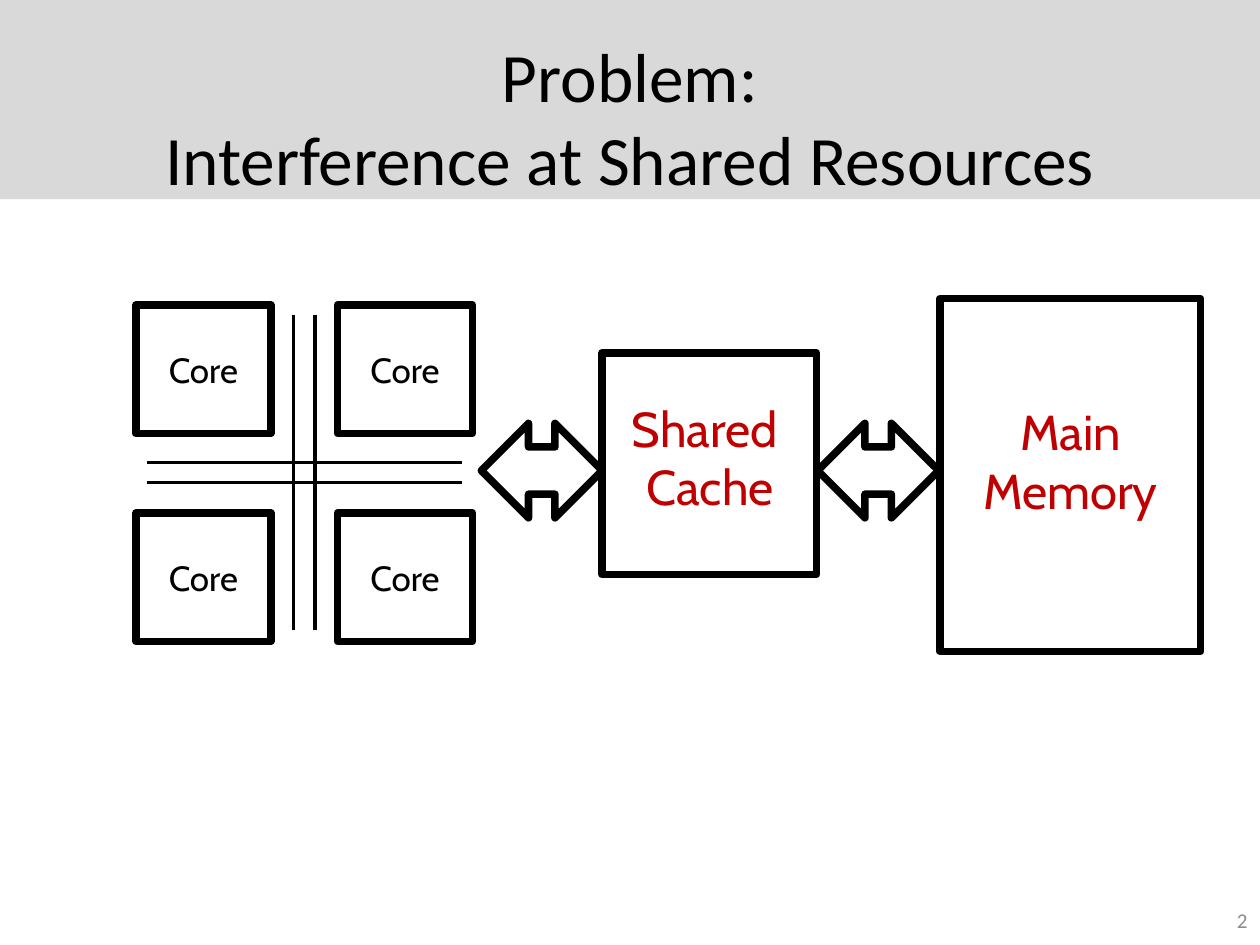
"""Build a slide on interference at the shared resources of a multicore system."""
from dataclasses import dataclass

from lxml import etree
from pptx import Presentation
from pptx.dml.color import RGBColor
from pptx.enum.shapes import MSO_CONNECTOR, MSO_SHAPE
from pptx.enum.text import MSO_ANCHOR, PP_ALIGN
from pptx.oxml.ns import qn
from pptx.util import Inches, Pt

RECT, ARROW = MSO_SHAPE.RECTANGLE, MSO_SHAPE.LEFT_RIGHT_ARROW
STRAIGHT = MSO_CONNECTOR.STRAIGHT
TOP, MIDDLE = MSO_ANCHOR.TOP, MSO_ANCHOR.MIDDLE
CENTER, RIGHT = PP_ALIGN.CENTER, PP_ALIGN.RIGHT

COLORS = {"black": "000000", "band": "D9D9D9", "red": "C00000", "gray": "8C8C8C"}


@dataclass
class Box:
    left: float
    top: float
    width: float
    height: float

    def emu(self) -> list:
        return [Inches(v) for v in (self.left, self.top, self.width, self.height)]


@dataclass
class Label:
    box: Box
    text: str
    size: float
    color: str = "black"
    font: str = "Cabin"
    align: PP_ALIGN = CENTER
    anchor: MSO_ANCHOR = TOP


def rgb(name: str) -> RGBColor:
    return RGBColor.from_string(COLORS[name])


def add_band(slide, box: Box) -> None:
    sp = slide.shapes.add_shape(RECT, *box.emu())
    sp.shadow.inherit = False
    sp.fill.solid()
    sp.fill.fore_color.rgb = rgb("band")
    sp.line.fill.background()


def add_outline(slide, kind: MSO_SHAPE, box: Box) -> None:
    sp = slide.shapes.add_shape(kind, *box.emu())
    sp.shadow.inherit = False
    sp.fill.background()
    sp.line.color.rgb = rgb("black")
    sp.line.width = Pt(4.32)
    etree.SubElement(sp.line._get_or_add_ln(), qn("a:round"))


def add_label(slide, label: Label) -> None:
    tf = slide.shapes.add_textbox(*label.box.emu()).text_frame
    tf.word_wrap = True
    tf.vertical_anchor = label.anchor
    tf.text = label.text
    for p in tf.paragraphs:
        p.alignment = label.align
        p.font.name = label.font
        p.font.size = Pt(label.size)
        p.font.color.rgb = rgb(label.color)


def add_wire(slide, x1: float, y1: float, x2: float, y2: float) -> None:
    ends = [Inches(v) for v in (x1, y1, x2, y2)]
    line = slide.shapes.add_connector(STRAIGHT, *ends)
    line.line.color.rgb = rgb("black")
    line.line.width = Pt(2)
    etree.SubElement(line._element.spPr, qn("a:effectLst"))


def main() -> None:
    prs = Presentation()
    prs.slide_width, prs.slide_height = Inches(10), Inches(7.5)
    s = prs.slides.add_slide(prs.slide_layouts[6])

    add_band(s, Box(0, 0, 10, 1.58))
    add_label(s, Label(Box(0.5, 0.3, 9, 1.25), "Problem:\vInterference at Shared Resources",
                       39.6, font="Calibri", anchor=MIDDLE))
    add_label(s, Label(Box(7.67, 7.1, 2.33, 0.4), "2", 12, "gray", "Calibri", RIGHT, MIDDLE))

    add_outline(s, RECT, Box(7.46, 2.37, 2.07, 2.8))
    add_label(s, Label(Box(7.49, 3.14, 2.01, 1.04), "Main Memory", 28, "red"))
    add_outline(s, RECT, Box(4.78, 2.8, 1.7, 1.76))
    add_label(s, Label(Box(4.81, 3.11, 1.65, 1.04), "Shared \nCache", 28, "red"))
    for left in (6.49, 3.82):
        add_outline(s, ARROW, Box(left, 3.36, 0.96, 0.75))

    for top in (2.42, 4.07):
        for left in (1.08, 2.68):
            add_outline(s, RECT, Box(left, top, 1.07, 1.02))
            add_label(s, Label(Box(left, top + 0.3, 1.07, 0.44), "Core", 20))

    for x in (2.33, 2.5):
        add_wire(s, x, 2.5, x, 5)
    for y in (3.83, 3.67):
        add_wire(s, 1.17, y, 3.67, y)

    prs.save("out.pptx")


if __name__ == "__main__":
    main()
